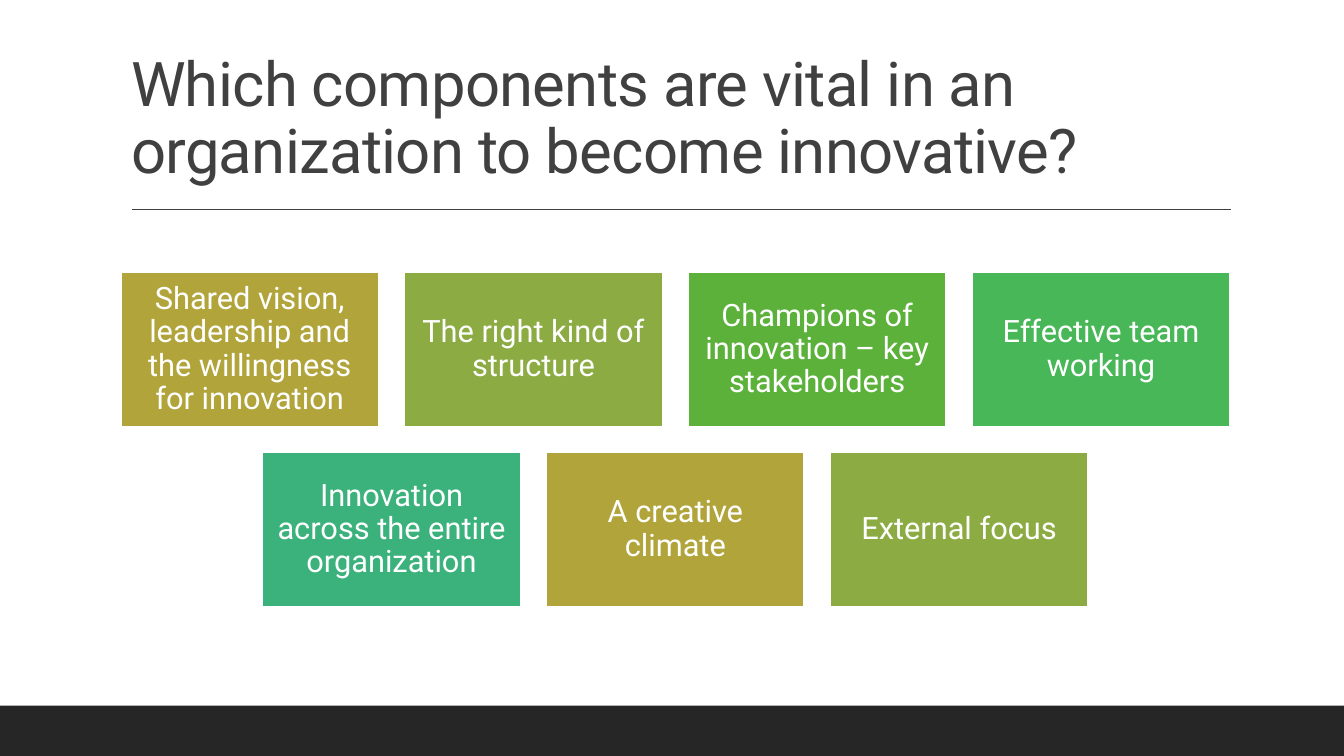
from lxml.etree import SubElement
from pptx import Presentation
from pptx.dml.color import RGBColor
from pptx.enum.shapes import MSO_CONNECTOR, MSO_SHAPE
from pptx.enum.text import MSO_ANCHOR, MSO_AUTO_SIZE, PP_ALIGN
from pptx.oxml.ns import qn
from pptx.util import Pt

SLIDE_WIDTH, SLIDE_HEIGHT = 960, 540
FONT = "Roboto"
WHITE, DARK_GREY, FOOTER_GREY = "FFFFFF", "404040", "262626"
CARD_COLORS = ["B1A43B", "8CAC43", "5CB13B", "48B757", "3BB17C"]
CARD_WIDTH, CARD_HEIGHT = 184.3, 110.2
CARD_GAP = 18.4
CARDS_TOP, CARDS_CENTER = 194.6, 482.4

TITLE = "Which components are vital in an organization to become innovative?"
COMPONENT_ROWS = [
    [
        "Shared vision, leadership and the willingness for innovation",
        "The right kind of structure",
        "Champions of innovation – key stakeholders",
        "Effective team working",
    ],
    [
        "Innovation across the entire organization",
        "A creative climate",
        "External focus",
    ],
]


def color(hex_string):
    return RGBColor.from_string(hex_string)


def write_text(shape, text, *, size, font_color, align, anchor, inset_x, inset_y, tracking=0):
    """Fill a shape with one formatted paragraph; tracking is in points."""
    frame = shape.text_frame
    frame.word_wrap = True
    frame.auto_size = MSO_AUTO_SIZE.NONE
    frame.vertical_anchor = anchor
    frame.margin_left = frame.margin_right = Pt(inset_x)
    frame.margin_top = frame.margin_bottom = Pt(inset_y)
    paragraph = frame.paragraphs[0]
    paragraph.alignment = align
    paragraph.line_spacing = 0.9
    run = paragraph.add_run()
    run.text = text
    run.font.name = FONT
    run.font.size = Pt(size)
    run.font.color.rgb = color(font_color)
    if tracking:
        run.font._element.set("spc", str(round(tracking * 100)))


def add_title(slide, text):
    title = slide.shapes.title
    title.left, title.top = Pt(86.4), Pt(22.5)
    title.width, title.height = Pt(792), Pt(114.2)
    write_text(title, text, size=44, font_color=DARK_GREY, align=PP_ALIGN.LEFT,
               anchor=MSO_ANCHOR.BOTTOM, inset_x=7.2, inset_y=3.6, tracking=-0.5)


def add_rule(slide, left, right, y):
    rule = slide.shapes.add_connector(
        MSO_CONNECTOR.STRAIGHT, Pt(left), Pt(y), Pt(right), Pt(y))
    rule.line.color.rgb = color(DARK_GREY)
    rule.line.width = Pt(1)
    SubElement(rule._element.spPr, qn("a:effectLst"))


def add_rectangle(slide, left, top, width, height, fill, outline=None):
    shape = slide.shapes.add_shape(
        MSO_SHAPE.RECTANGLE, Pt(left), Pt(top), Pt(width), Pt(height))
    shape.shadow.inherit = False
    shape.fill.solid()
    shape.fill.fore_color.rgb = color(fill)
    if outline:
        shape.line.color.rgb = color(outline)
        shape.line.width = Pt(1.25)
    else:
        shape.line.fill.background()
    return shape


def add_cards(slide, rows):
    """Place centred rows of cards whose colours cycle in reading order."""
    card_number = 0
    for row_index, row in enumerate(rows):
        top = CARDS_TOP + row_index * (CARD_HEIGHT + CARD_GAP)
        row_width = len(row) * (CARD_WIDTH + CARD_GAP) - CARD_GAP
        for column, text in enumerate(row):
            left = CARDS_CENTER - row_width / 2 + column * (CARD_WIDTH + CARD_GAP)
            fill = CARD_COLORS[card_number % len(CARD_COLORS)]
            card = add_rectangle(slide, left, top, CARD_WIDTH, CARD_HEIGHT, fill, WHITE)
            write_text(card, text, size=22, font_color=WHITE, align=PP_ALIGN.CENTER,
                       anchor=MSO_ANCHOR.MIDDLE, inset_x=6.6, inset_y=6.6)
            card_number += 1


def main():
    presentation = Presentation()
    presentation.slide_width = Pt(SLIDE_WIDTH)
    presentation.slide_height = Pt(SLIDE_HEIGHT)
    title_only_layout = presentation.slide_layouts[5]
    slide = presentation.slides.add_slide(title_only_layout)
    slide.background.fill.solid()
    slide.background.fill.fore_color.rgb = color(WHITE)
    add_title(slide, TITLE)
    add_rule(slide, 94.3, 879.1, 149.8)
    add_rectangle(slide, 0, 504, SLIDE_WIDTH, 36, FOOTER_GREY)
    add_cards(slide, COMPONENT_ROWS)
    presentation.save("out.pptx")


if __name__ == "__main__":
    main()
